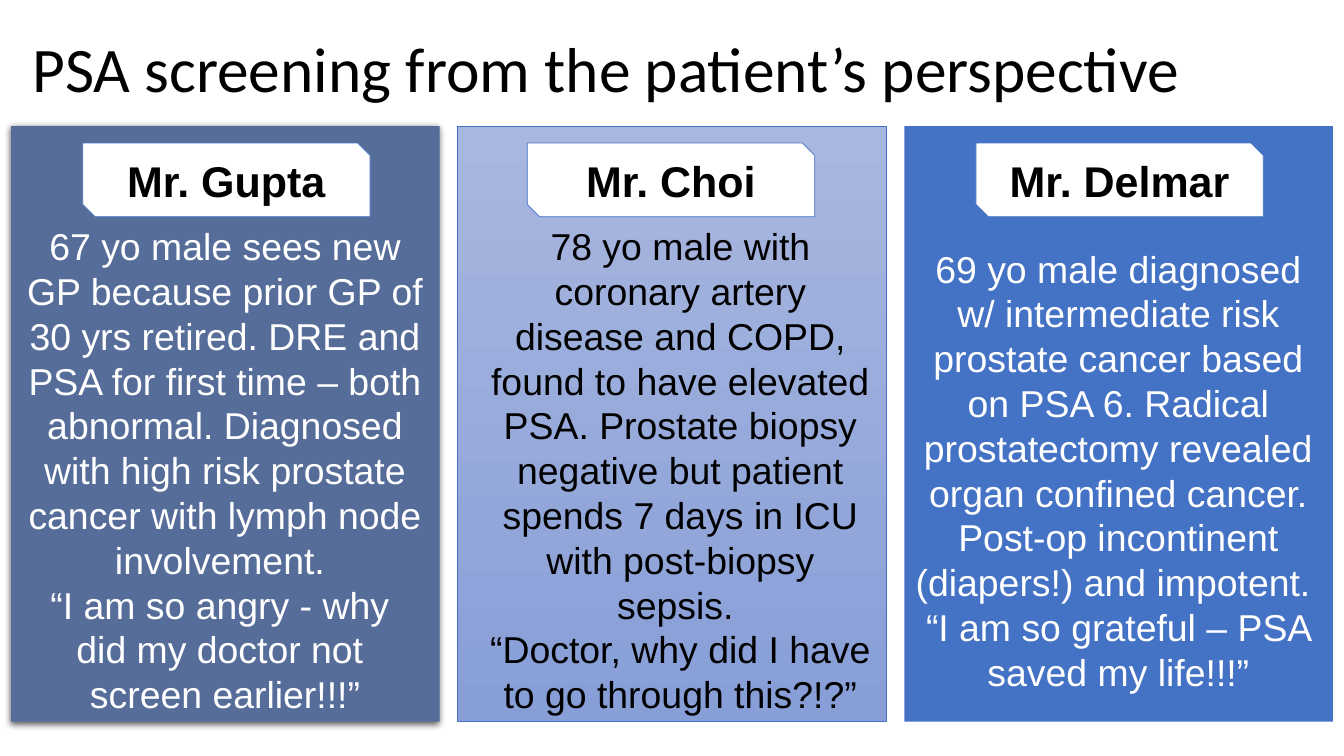
from lxml import etree
from pptx import Presentation
from pptx.dml.color import RGBColor
from pptx.enum import shapes, text
from pptx.oxml import ns
from pptx.util import Inches, Pt

TITLE = "PSA screening from the patient’s perspective"
PATIENTS = [
    {"name": "Mr. Gupta", "tag_left": 0.82, "fill": ["566D9A"], "line": None,
     "color": "FFFFFF", "indent": 0, "shadow": True,
     "story": "67 yo male sees new GP because prior GP of 30 yrs retired. "
              "DRE and PSA for first time – both abnormal. Diagnosed with high "
              "risk prostate cancer with lymph node involvement. \v"
              "“I am so angry - why \vdid my doctor not \vscreen earlier!!!”"},
    {"name": "Mr. Choi", "tag_left": 5.23, "fill": ["A8B7DF", "889ED7"],
     "line": "4472C4", "color": "000000", "indent": 0.17, "shadow": False,
     "story": "78 yo male with coronary artery disease and COPD, found to have "
              "elevated PSA. Prostate biopsy negative but patient spends 7 days "
              "in ICU with post-biopsy sepsis. \v"
              "“Doctor, why did I have to go through this?!?”"},
    {"name": "Mr. Delmar", "tag_left": 9.68, "fill": ["4472C4"], "line": None,
     "color": "FFFFFF", "indent": 0, "shadow": False,
     "story": "69 yo male diagnosed w/ intermediate risk prostate cancer based "
              "on PSA 6. Radical prostatectomy revealed organ confined cancer. "
              "Post-op incontinent (diapers!) and impotent. \n"
              "“I am so grateful – PSA saved my life!!!”"},
]
PANEL = {"left": 0.11, "top": 1.25, "width": 4.25, "height": 5.91, "gap": 0.18}
TAG = {"top": 1.42, "width": 2.85, "height": 0.73}
TITLE_FONT = {"name": "Calibri", "size": Pt(45.3), "bold": False}
STORY_FONT = {"name": "Arial", "size": Pt(26.7), "bold": False}
TAG_FONT = {"name": "Arial", "size": Pt(30.7), "bold": True}


def rgb(value):
    return RGBColor.from_string(value)


def write(tf, content, font, color, align, spacing):
    tf.text = content
    tf.word_wrap = True
    tf.auto_size = text.MSO_AUTO_SIZE.NONE
    tf.vertical_anchor = text.MSO_ANCHOR.MIDDLE
    for p in tf.paragraphs:
        p.alignment = align
        p.line_spacing = spacing
        for r in p.runs:
            for key, value in font.items():
                setattr(r.font, key, value)
            r.font.color.rgb = rgb(color)


def add_box(s, kind, box, fill, line):
    sp = s.shapes.add_shape(kind, *[Inches(v) for v in box])
    sp.shadow.inherit = False
    if len(fill) == 1:
        sp.fill.solid()
        sp.fill.fore_color.rgb = rgb(fill[0])
    else:
        sp.fill.gradient()
        sp.fill.gradient_angle = 270
        for stop, value in zip(sp.fill.gradient_stops, fill):
            stop.color.rgb = rgb(value)
    if line:
        sp.line.color.rgb = rgb(line)
        sp.line.width = Pt(0.5)
    else:
        sp.line.fill.background()
    return sp


def add_shadow(sp):
    effects = sp.element.spPr.find(ns.qn("a:effectLst"))
    shadow = etree.SubElement(effects, ns.qn("a:outerShdw"), blurRad=str(Pt(4.5)),
                              dist=str(Pt(1.5)), dir="5400000", rotWithShape="0")
    color = etree.SubElement(shadow, ns.qn("a:srgbClr"), val="000000")
    etree.SubElement(color, ns.qn("a:alpha"), val="63000")


def add_panel(s, i, patient):
    left = PANEL["left"] + i * (PANEL["width"] + PANEL["gap"])
    box = (left, PANEL["top"], PANEL["width"], PANEL["height"])
    sp = add_box(s, shapes.MSO_SHAPE.RECTANGLE, box, patient["fill"], patient["line"])
    if patient["shadow"]:
        add_shadow(sp)
    tf = sp.text_frame
    write(tf, patient["story"], STORY_FONT, patient["color"],
          text.PP_ALIGN.CENTER, Pt(32))
    tf.margin_top = Inches(0.96)
    tf.margin_bottom = Inches(0.05)
    tf.margin_left = Inches(0.1 + patient["indent"])


def add_tag(s, patient):
    box = (patient["tag_left"], TAG["top"], TAG["width"], TAG["height"])
    sp = add_box(s, shapes.MSO_SHAPE.SNIP_2_DIAG_RECTANGLE, box, ["FFFFFF"], "4472C4")
    write(sp.text_frame, patient["name"], TAG_FONT, "000000", text.PP_ALIGN.CENTER, 1.0)


def main():
    prs = Presentation()
    prs.slide_width, prs.slide_height = Inches(13.33), Inches(7.5)
    s = prs.slides.add_slide(prs.slide_layouts[5])
    title = s.shapes.title
    title.left, title.top = Inches(0.22), Inches(0.09)
    title.width, title.height = Inches(12.89), Inches(1.25)
    write(title.text_frame, TITLE, TITLE_FONT, "000000", text.PP_ALIGN.LEFT, 0.9)
    for i, patient in enumerate(PATIENTS):
        add_panel(s, i, patient)
    for patient in PATIENTS:
        add_tag(s, patient)
    prs.save("out.pptx")


if __name__ == "__main__":
    main()
